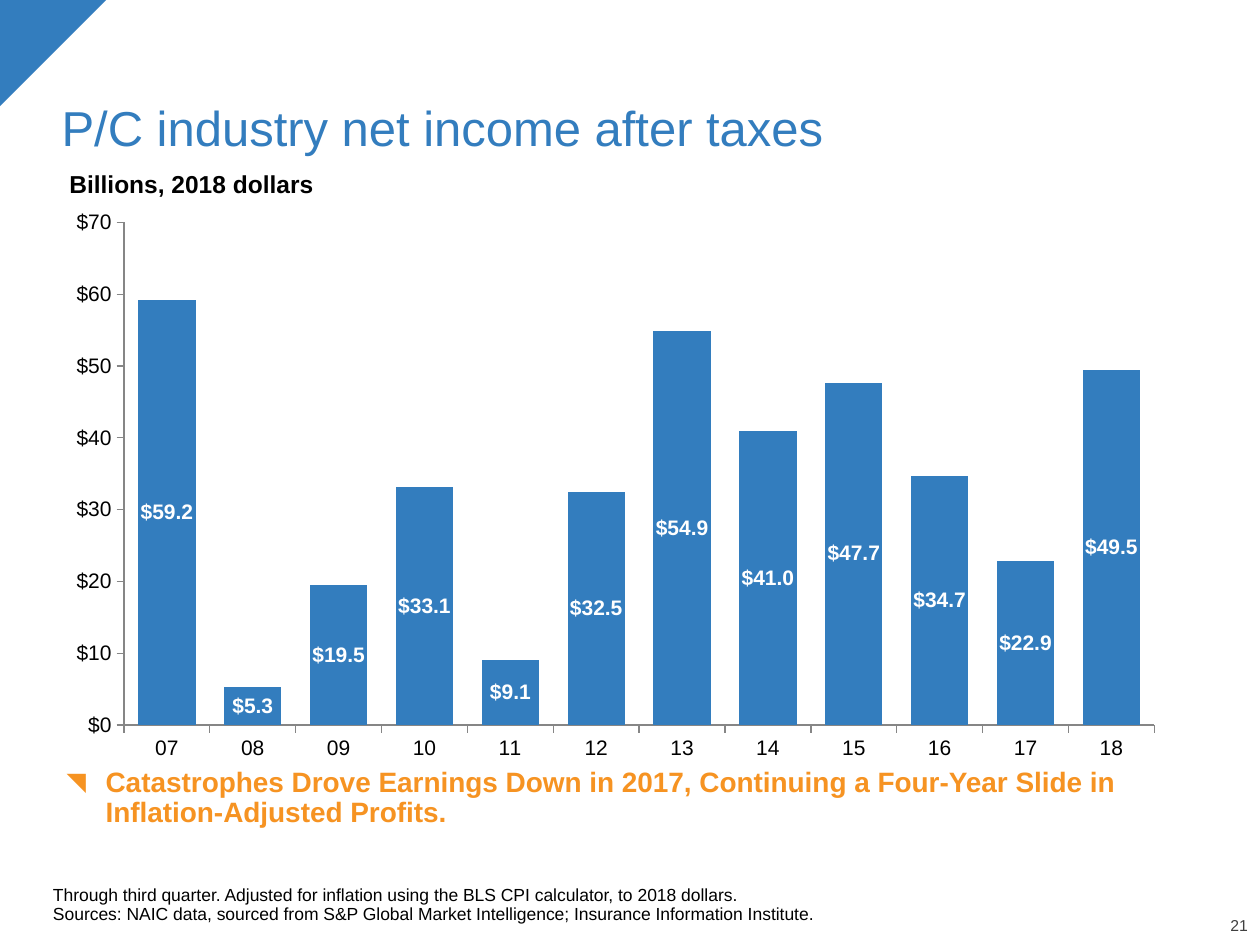
from lxml.etree import SubElement
from pptx import Presentation
from pptx.chart.data import CategoryChartData
from pptx.dml.color import RGBColor
from pptx.enum.chart import XL_CHART_TYPE, XL_LABEL_POSITION, XL_TICK_LABEL_POSITION, XL_TICK_MARK
from pptx.enum.shapes import MSO_SHAPE
from pptx.enum.text import MSO_ANCHOR, MSO_AUTO_SIZE, PP_ALIGN
from pptx.oxml import parse_xml
from pptx.oxml.ns import nsdecls, qn
from pptx.util import Emu, Pt

EMU_PER_PX = 914400 / 126
FONT = "Arial"
BLUE = RGBColor(0x33, 0x7D, 0xBE)
ORANGE = RGBColor(0xF6, 0x93, 0x22)
BLACK = RGBColor(0, 0, 0)
WHITE = RGBColor(0xFF, 0xFF, 0xFF)
DARK_GRAY = RGBColor(0x40, 0x40, 0x40)
AXIS_GRAY = RGBColor(0x86, 0x86, 0x86)
YEARS = [f"{year:02d}" for year in range(7, 19)]
NET_INCOME = [59.2, 5.3, 19.5, 33.1, 9.1, 32.5, 54.9, 41.0, 47.7, 34.7, 22.9, 49.5]
PLOT_LAYOUT = {"x": 0.05, "y": 0.03, "w": 0.92, "h": 0.87}


def px(length):
    """Turn pixels into EMU."""
    return Emu(round(length * EMU_PER_PX))


def place(shape, box):
    """Move a shape to a box of left, top, width and height in pixels."""
    shape.left, shape.top, shape.width, shape.height = map(px, box)


def style_font(font, size, color, bold=False):
    """Set the typeface, size, colour and weight of a font."""
    font.name = FONT
    font.size = Pt(size)
    font.bold = bold
    font.color.rgb = color


def write_text(shape, text, size, color, bold=False, anchor=MSO_ANCHOR.TOP,
               align=PP_ALIGN.LEFT, margin=None):
    """Fill a shape with one formatted paragraph and return it."""
    frame = shape.text_frame
    frame.text = text
    frame.word_wrap = True
    frame.auto_size = MSO_AUTO_SIZE.NONE
    frame.vertical_anchor = anchor
    if margin is not None:
        frame.margin_left = frame.margin_right = px(margin)
        frame.margin_top = frame.margin_bottom = px(margin)
    paragraph = frame.paragraphs[0]
    paragraph.alignment = align
    paragraph.line_spacing = 0.9
    paragraph.space_before = Pt(0)
    for run in paragraph.runs:
        style_font(run.font, size, color, bold)
    return paragraph


def add_label(slide, box, text, size, color, **options):
    """Add a text box holding one formatted paragraph."""
    write_text(slide.shapes.add_textbox(*map(px, box)), text, size, color, **options)


def add_corner(slide, box):
    """Add the triangle in the top left corner."""
    triangle = slide.shapes.add_shape(MSO_SHAPE.RIGHT_TRIANGLE, *map(px, box))
    triangle.rotation = 90
    triangle.shadow.inherit = False
    triangle.fill.solid()
    triangle.fill.fore_color.rgb = BLUE
    triangle.line.fill.background()


def fill_title(slide, box):
    """Write the slide title in its placeholder."""
    title = slide.shapes.title
    place(title, box)
    write_text(title, "P/C industry net income after taxes", 28, BLUE, anchor=MSO_ANCHOR.BOTTOM)


def fill_takeaway(slide, box):
    """Write the bulleted takeaway in the body placeholder."""
    body = slide.placeholders[1]
    place(body, box)
    paragraph = write_text(
        body, "Catastrophes Drove Earnings Down in 2017, Continuing a Four-Year Slide in "
        "Inflation-Adjusted Profits.", 16, ORANGE, bold=True)
    properties = paragraph._p.get_or_add_pPr()
    properties.set("marL", str(px(39)))
    properties.set("indent", str(-px(39)))
    SubElement(properties, qn("a:buSzPct")).set("val", "90000")
    SubElement(properties, qn("a:buFont")).set("typeface", FONT)
    SubElement(properties, qn("a:buChar")).set("char", "◥")


def set_plot_layout(chart):
    """Fix the inner plot area as fractions of the chart."""
    plot_area = chart._chartSpace.chart.plotArea
    for layout in plot_area.findall(qn("c:layout")):
        plot_area.remove(layout)
    modes = "".join(f'<c:{side}Mode val="edge"/>' for side in "xy")
    sizes = "".join(f'<c:{side} val="{value}"/>' for side, value in PLOT_LAYOUT.items())
    plot_area.insert(0, parse_xml(
        f'<c:layout {nsdecls("c")}><c:manualLayout><c:layoutTarget val="inner"/>'
        f'{modes}{sizes}</c:manualLayout></c:layout>'))


def add_income_chart(slide, box):
    """Add the column chart of net income by year."""
    data = CategoryChartData()
    data.categories = YEARS
    data.add_series("Series 1", NET_INCOME)
    chart = slide.shapes.add_chart(XL_CHART_TYPE.COLUMN_CLUSTERED, *map(px, box), data).chart
    style_font(chart.font, 12, BLACK)
    chart.has_legend = False
    chart.has_title = False
    set_plot_layout(chart)

    for axis in (chart.category_axis, chart.value_axis):
        axis.has_major_gridlines = False
        axis.major_tick_mark = XL_TICK_MARK.OUTSIDE
        axis.minor_tick_mark = XL_TICK_MARK.NONE
        axis.format.line.color.rgb = AXIS_GRAY
        style_font(axis.tick_labels.font, 12, BLACK)
    chart.category_axis.tick_label_position = XL_TICK_LABEL_POSITION.LOW
    value_axis = chart.value_axis
    value_axis.minimum_scale, value_axis.maximum_scale, value_axis.major_unit = 0, 70, 10
    value_axis.tick_labels.number_format = '"$"#,##0'
    value_axis.tick_labels.number_format_is_linked = False

    plot = chart.plots[0]
    plot.gap_width = 50
    plot.vary_by_categories = False
    series = plot.series[0]
    series.format.fill.solid()
    series.format.fill.fore_color.rgb = BLUE
    labels = series.data_labels
    labels.show_value = True
    labels.position = XL_LABEL_POSITION.CENTER
    labels.number_format = '"$"#,##0.0'
    labels.number_format_is_linked = False
    style_font(labels.font, 12, WHITE, bold=True)


def main():
    """Build and save the net income slide."""
    presentation = Presentation()
    presentation.slide_width, presentation.slide_height = px(1260), px(945)
    slide = presentation.slides.add_slide(presentation.slide_layouts[1])
    add_corner(slide, (0, 0, 106, 106))
    add_label(slide, (1188, 918, 60, 17), "21", 9, DARK_GRAY,
              anchor=MSO_ANCHOR.BOTTOM, align=PP_ALIGN.RIGHT, margin=0)
    fill_title(slide, (49, 32, 1166, 131))
    add_label(slide, (53, 867, 1166, 57),
              "Through third quarter. Adjusted for inflation using the BLS CPI calculator, to 2018 dollars.\v"
              "Sources: NAIC data, sourced from S&P Global Market Intelligence; Insurance Information Institute.",
              10, BLACK, anchor=MSO_ANCHOR.BOTTOM, margin=0)
    add_income_chart(slide, (68, 205, 1120, 578))
    add_label(slide, (57, 166, 364, 39), "Billions, 2018 dollars", 14, BLACK,
              bold=True, anchor=MSO_ANCHOR.MIDDLE)
    fill_takeaway(slide, (54, 762, 1101, 74))
    presentation.save("out.pptx")


if __name__ == "__main__":
    main()
